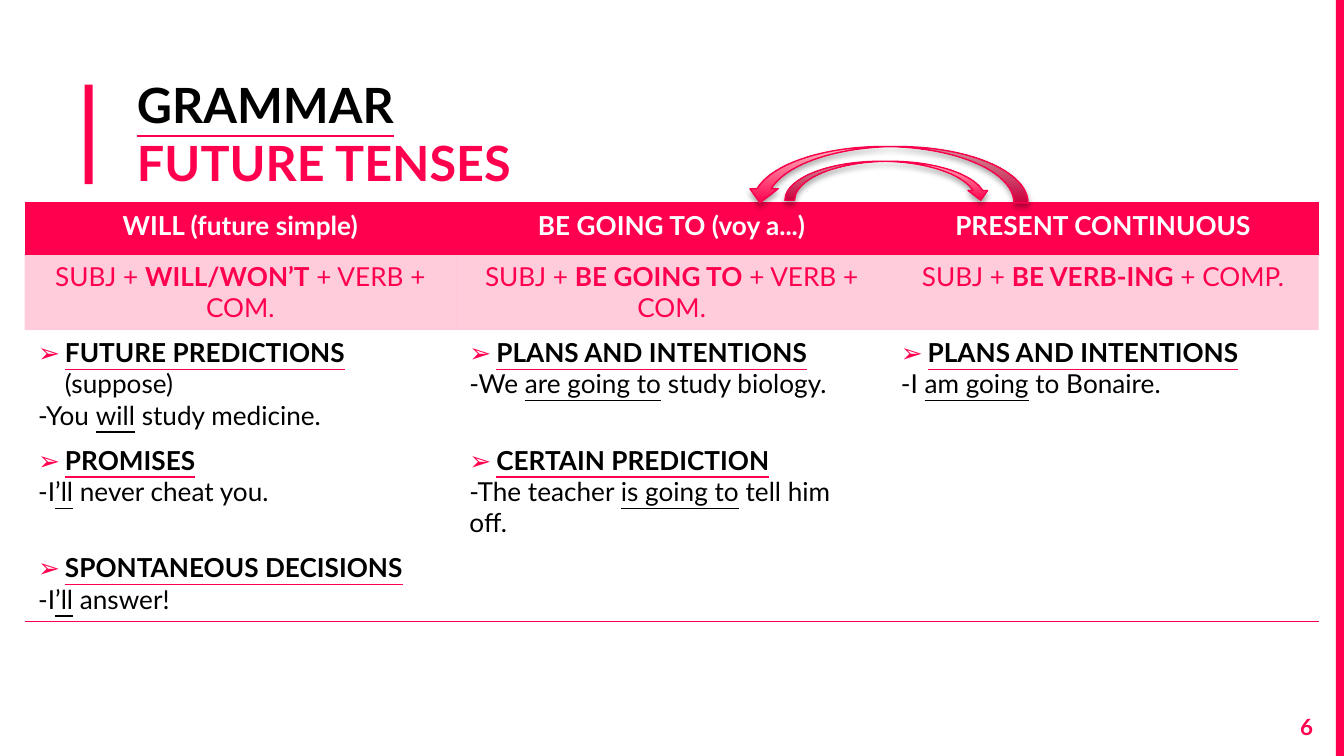
from dataclasses import dataclass

from lxml.etree import SubElement
from pptx import Presentation
from pptx.dml.color import RGBColor
from pptx.enum.shapes import MSO_SHAPE as Shape
from pptx.enum.text import MSO_ANCHOR as Anchor, MSO_AUTO_SIZE as AutoSize, PP_ALIGN as Align
from pptx.oxml import parse_xml
from pptx.oxml.ns import nsdecls, qn
from pptx.util import Pt


@dataclass(frozen=True)
class Theme:
    font: str = "Lato"
    accent: str = "FF004E"
    pale: str = "FFBDC2"
    outline: str = "F9004C"
    ink: str = "000000"
    white: str = "FFFFFF"
    title: int = 26
    body: int = 14
    number: int = 12


THEME = Theme()
NO_STYLE = "{2D5ABB26-0587-4C30-8999-92F81FD0307C}"
COLUMN_WIDTH = 231.1
ROW_HEIGHTS = [27.4, 40.8, 57.6, 57.6, 40.8]

TENSES = ["WILL (future simple)", "BE GOING TO (voy a...)", "PRESENT CONTINUOUS"]
# Text between asterisks is emphasised
FORMULAS = [
    "SUBJ + *WILL/WON’T* + VERB + COM.",
    "SUBJ + *BE GOING TO* + VERB + COM.",
    "SUBJ + *BE VERB-ING* + COMP.",
]
# Each use: heading, example
USES = [
    [("*FUTURE PREDICTIONS* (suppose)", "-You *will* study medicine."),
     ("*PLANS AND INTENTIONS*", "-We *are going to* study biology."),
     ("*PLANS AND INTENTIONS*", "-I *am going* to Bonaire.")],
    [("*PROMISES*", "-I*’ll* never cheat you."),
     ("*CERTAIN PREDICTION*", "-The teacher *is going to* tell him off.")],
    [("*SPONTANEOUS DECISIONS*", "-I*’ll* answer!")],
]


def rgb(color):
    return RGBColor.from_string(color)


def xml(markup):
    return parse_xml(markup.replace(" ", f" {nsdecls('a')} ", 1))


def write(paragraph, text, size=THEME.body, color=THEME.ink, bold=False,
          underline=False, underline_color=None):
    run = paragraph.add_run()
    run.text = text
    font = run.font
    font.name, font.size, font.bold, font.underline = THEME.font, Pt(size), bold, underline
    font.color.rgb = rgb(color)
    if underline_color:
        latin = run._r.rPr.find(qn("a:latin"))
        latin.addprevious(xml(f'<a:uFill ><a:solidFill><a:srgbClr val="{underline_color}"/>'
                              '</a:solidFill></a:uFill>'))


def write_marked(paragraph, text, emphasis, **style):
    for index, part in enumerate(text.split("*")):
        if part:
            write(paragraph, part, **(style | emphasis if index % 2 else style))


def add_bullet(paragraph):
    properties = paragraph._p.get_or_add_pPr()
    properties.set("marL", str(Pt(14.4)))
    properties.set("indent", str(-Pt(14.4)))
    color = SubElement(properties, qn("a:buClr"))
    SubElement(color, qn("a:srgbClr"), val=THEME.accent)
    SubElement(properties, qn("a:buFont"), typeface=THEME.font)
    SubElement(properties, qn("a:buChar"), char="➢")


def fill_cell(cell, alpha=None):
    cell.fill.solid()
    cell.fill.fore_color.rgb = rgb(THEME.accent)
    if alpha:
        color = cell._tc.tcPr.find(".//" + qn("a:srgbClr"))
        SubElement(color, qn("a:alpha"), val=str(alpha * 1000))


def add_borders(cell, *sides):
    """Sides are inserted first, in schema order: T, then B."""
    properties = cell._tc.get_or_add_tcPr()
    for position, side in enumerate(sides):
        properties.insert(position, xml(
            f'<a:ln{side} w="{Pt(1)}"><a:solidFill><a:srgbClr val="{THEME.accent}"/>'
            f'</a:solidFill></a:ln{side}>'))


def add_bar(slide, left, top, width, height):
    bar = slide.shapes.add_shape(Shape.RECTANGLE, Pt(left), Pt(top), Pt(width), Pt(height))
    bar.shadow.inherit = False
    bar.fill.solid()
    bar.fill.fore_color.rgb = rgb(THEME.accent)
    bar.line.fill.background()


def add_curved_arrow(slide, left, top, width, height, flipped=False):
    arrow = slide.shapes.add_shape(Shape.CURVED_DOWN_ARROW,
                                   Pt(left), Pt(top), Pt(width), Pt(height))
    arrow.fill.gradient()
    arrow.fill.gradient_angle = 90
    for stop, color, position in zip(arrow.fill.gradient_stops,
                                     (THEME.accent, THEME.pale), (0, 1)):
        stop.color.rgb = rgb(color)
        stop.position = position
    arrow.line.color.rgb = rgb(THEME.outline)
    arrow.line.width = Pt(0.75)
    arrow.shadow.inherit = False
    properties = arrow._element.spPr
    properties.find(qn("a:effectLst")).append(xml(
        f'<a:outerShdw blurRad="{Pt(3.1)}" dist="{Pt(1.8)}" dir="5400000" rotWithShape="0">'
        f'<a:srgbClr val="{THEME.ink}"><a:alpha val="35000"/></a:srgbClr></a:outerShdw>'))
    if flipped:
        properties.find(qn("a:xfrm")).set("flipH", "1")


def set_frame(frame, anchor):
    frame.margin_left = frame.margin_right = frame.margin_top = frame.margin_bottom = Pt(7.2)
    frame.word_wrap = True
    frame.auto_size = AutoSize.NONE
    frame.vertical_anchor = anchor


def add_title(slide):
    title = slide.shapes.title
    title.left, title.top, title.width, title.height = Pt(66.2), Pt(33.1), Pt(254.2), Pt(67.7)
    set_frame(title.text_frame, Anchor.TOP)
    heading = title.text_frame.paragraphs[0]
    heading.alignment = Align.LEFT
    write(heading, "GRAMMAR", size=THEME.title, bold=True, underline=True,
          underline_color=THEME.accent)
    heading.add_line_break()
    write(heading, "FUTURE TENSES", size=THEME.title, color=THEME.accent, bold=True)


def add_page_number(slide):
    number = slide.shapes.add_textbox(Pt(667.4), Pt(373.7), Pt(43.2), Pt(31))
    set_frame(number.text_frame, Anchor.MIDDLE)
    paragraph = number.text_frame.paragraphs[0]
    paragraph.alignment = Align.RIGHT
    write(paragraph, "6", size=THEME.number, color=THEME.accent, bold=True)


def add_tense_table(slide):
    frame = slide.shapes.add_table(len(ROW_HEIGHTS), len(TENSES), Pt(13.2), Pt(108.6),
                                   Pt(COLUMN_WIDTH * len(TENSES)), Pt(sum(ROW_HEIGHTS)))
    table = frame.table
    table.first_row = table.horz_banding = False
    table._tbl.tblPr.find(qn("a:tableStyleId")).text = NO_STYLE
    for column in table.columns:
        column.width = Pt(COLUMN_WIDTH)
    for row, height in zip(table.rows, ROW_HEIGHTS):
        row.height = Pt(height)

    # Tense names and their formulas
    for index, (tense, formula) in enumerate(zip(TENSES, FORMULAS)):
        name_cell, formula_cell = table.cell(0, index), table.cell(1, index)
        fill_cell(name_cell)
        add_borders(name_cell, "T", "B")
        fill_cell(formula_cell, alpha=20)
        for cell in (name_cell, formula_cell):
            cell.text_frame.paragraphs[0].alignment = Align.CENTER
        write(name_cell.text_frame.paragraphs[0], tense, color=THEME.white, bold=True)
        write_marked(formula_cell.text_frame.paragraphs[0], formula, {"bold": True},
                     color=THEME.accent)

    # Uses, each with an example
    heading_emphasis = {"bold": True, "underline": True, "underline_color": THEME.accent}
    for row, uses in enumerate(USES, start=2):
        for column, (heading, example) in enumerate(uses):
            text = table.cell(row, column).text_frame
            add_bullet(text.paragraphs[0])
            write_marked(text.paragraphs[0], heading, heading_emphasis)
            write_marked(text.add_paragraph(), example, {"underline": True})
    for column in range(len(TENSES)):
        add_borders(table.cell(len(ROW_HEIGHTS) - 1, column), "B")


def main():
    deck = Presentation()
    deck.slide_width, deck.slide_height = Pt(720), Pt(405)
    slide = deck.slides.add_slide(deck.slide_layouts[5])

    # Accent bars beside the title and on the right edge
    add_bar(slide, 45.4, 45.4, 4.3, 53.3)
    add_bar(slide, 715.7, 0, 4.3, 405)

    add_title(slide)
    add_page_number(slide)
    add_tense_table(slide)

    # Arrows linking the two interchangeable tenses
    add_curved_arrow(slide, 420.5, 86.4, 110.2, 20.9)
    add_curved_arrow(slide, 399.6, 78.5, 151.2, 30.2, flipped=True)

    deck.save("out.pptx")


if __name__ == "__main__":
    main()
